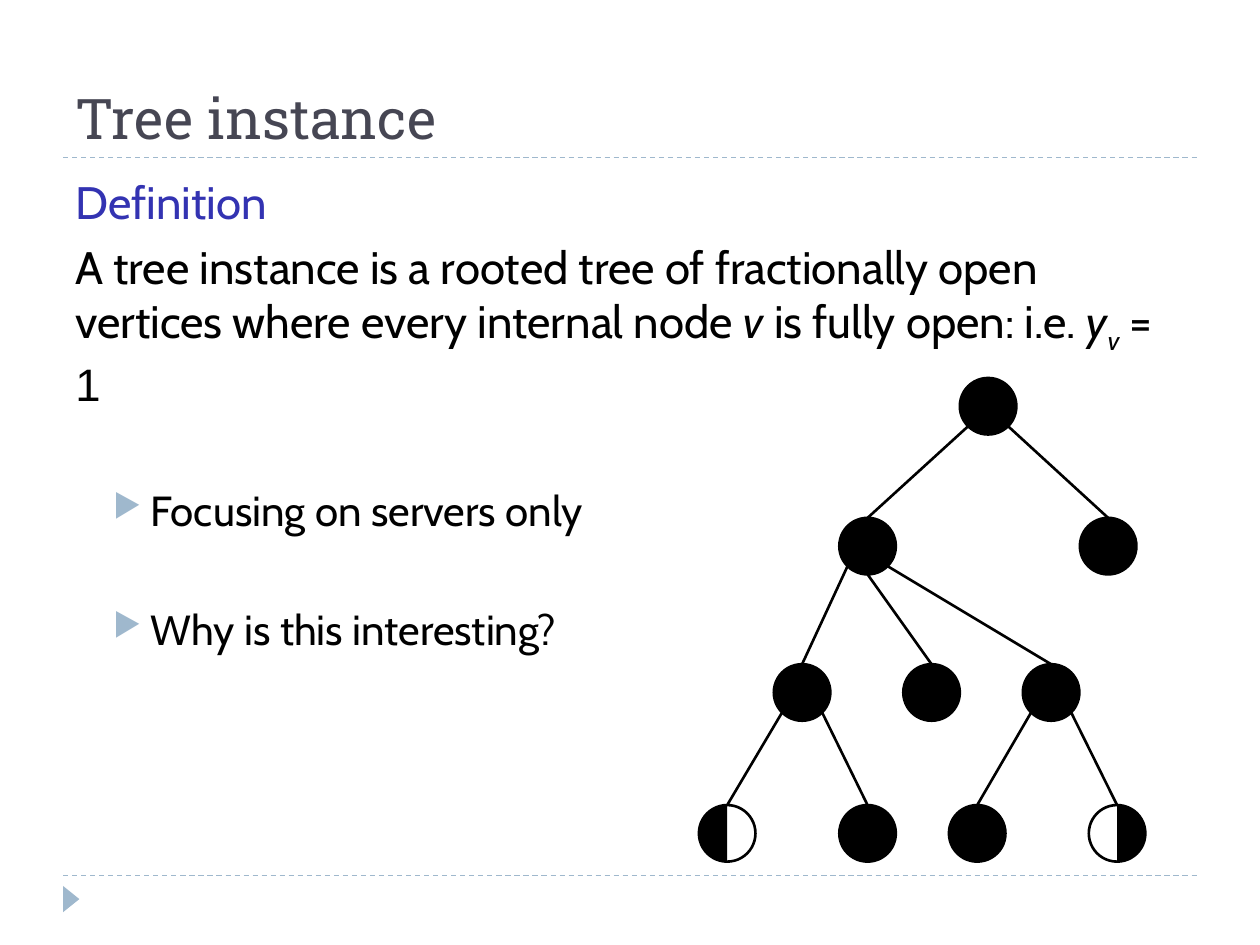
from lxml import etree
from pptx import Presentation
from pptx import util as u
from pptx.dml.color import RGBColor
from pptx.enum import dml, shapes, text
from pptx.oxml import ns

COLORS = {"title": "464653", "heading": "3333B2", "text": "000000", "accent": "9FB8CD"}
DIAMETER = 1.14
ROWS = [7.62, 10.44, 13.39, 16.23]

# name: (left in cm, row, filled part)
NODES = {
    "root": (19.35, 0, "all"),
    "left": (16.92, 1, "all"),
    "right": (21.77, 1, "all"),
    "left_a": (15.6, 2, "all"),
    "left_b": (18.21, 2, "all"),
    "left_c": (20.62, 2, "all"),
    "leaf_a": (14.09, 3, "left"),
    "leaf_b": (16.92, 3, "all"),
    "leaf_c": (19.13, 3, "all"),
    "leaf_d": (21.95, 3, "right"),
}
CHILDREN = {
    "root": ["left", "right"],
    "left": ["left_a", "left_b", "left_c"],
    "left_a": ["leaf_a", "leaf_b"],
    "left_c": ["leaf_c", "leaf_d"],
}
# Start and end of a half disc, in hundred-thousandths of 60000ths of a degree
HALF_ARCS = {"left": (54, 162), "right": (162, 54)}


def color(name):
    return RGBColor.from_string(COLORS[name])


def add_line(slide, start, end, color_name, width, dashed=False):
    points = [u.Cm(value) for value in (*start, *end)]
    line = slide.shapes.add_connector(shapes.MSO_CONNECTOR.STRAIGHT, *points)
    line.line.color.rgb = color(color_name)
    line.line.width = u.Pt(width)
    if dashed:
        line.line.dash_style = dml.MSO_LINE.DASH
    etree.SubElement(line._element.spPr, ns.qn("a:effectLst"))
    return line


def add_shape(slide, kind, left, top, width, height, fill=None, outline=None):
    box = [u.Cm(value) for value in (left, top, width, height)]
    shape = slide.shapes.add_shape(kind, *box)
    shape.shadow.inherit = False
    if fill:
        shape.fill.solid()
        shape.fill.fore_color.rgb = color(fill)
    else:
        shape.fill.background()
    if outline:
        shape.line.color.rgb = color(outline)
        shape.line.width = u.Pt(1.5)
    else:
        shape.line.fill.background()
    return shape


def add_text_box(slide, left, top, width, height, anchor):
    box = [u.Cm(value) for value in (left, top, width, height)]
    text_frame = slide.shapes.add_textbox(*box).text_frame
    text_frame.word_wrap = True
    text_frame.vertical_anchor = anchor
    return text_frame


def format_run(run, size, color_name="text", font="Cabin"):
    run.font.size = u.Pt(size)
    run.font.name = font
    run.font.color.rgb = color(color_name)


def add_bullet(paragraph):
    properties = paragraph._p.get_or_add_pPr()
    properties.set("marL", str(u.Cm(1.52)))
    properties.set("indent", str(-u.Cm(0.76)))
    bullet_color = etree.SubElement(properties, ns.qn("a:buClr"))
    etree.SubElement(bullet_color, ns.qn("a:srgbClr"), val=COLORS["accent"])
    etree.SubElement(properties, ns.qn("a:buSzPct"), val="76000")
    etree.SubElement(properties, ns.qn("a:buChar"), char="▶")


def add_frame(slide):
    """Dashed rules and the footer marker."""
    for y in (17.65, 3.18):
        add_line(slide, (1.27, y), (24.13, y), "accent", 0.75, dashed=True)
    marker = add_shape(slide, shapes.MSO_SHAPE.ISOSCELES_TRIANGLE,
                       1.17, 17.96, 0.53, 0.33, "accent")
    marker.rotation = 90


def add_title(slide):
    text_frame = add_text_box(slide, 1.27, 0.43, 22.86, 2.74, text.MSO_ANCHOR.BOTTOM)
    text_frame.text = "Tree instance"
    format_run(text_frame.paragraphs[0].runs[0], 32, "title", "Roboto Slab")


def add_definition(paragraph):
    parts = [
        ("A tree instance is a rooted tree of fractionally open vertices "
         "where every internal node ", False),
        ("v", True), (" is fully open: i.e. ", False),
        ("y", True), ("v", True), (" = ", False), ("1", False),
    ]
    for content, italic in parts:
        run = paragraph.add_run()
        run.text = content
        format_run(run, 26)
        run.font.italic = italic
    paragraph.runs[4].font._element.set("baseline", "-25000")
    paragraph.runs[-1].font.name = "Arial"


def add_body(slide):
    text_frame = add_text_box(slide, 1.27, 3.38, 22.86, 13.72, text.MSO_ANCHOR.TOP)
    heading = text_frame.paragraphs[0]
    heading.text = "Definition"
    heading.space_before = u.Pt(6)
    format_run(heading.runs[0], 26, "heading")

    definition = text_frame.add_paragraph()
    definition.space_before = u.Pt(6)
    add_definition(definition)

    for content, gap in (("Focusing on servers only", 42.6),
                         ("Why is this interesting?", 39)):
        paragraph = text_frame.add_paragraph()
        paragraph.text = content
        paragraph.space_before = u.Pt(gap)
        add_bullet(paragraph)
        format_run(paragraph.runs[0], 24)


def add_node(slide, left, row, part):
    box = (left, ROWS[row], DIAMETER, DIAMETER)
    fill = "text" if part == "all" else None
    node = add_shape(slide, shapes.MSO_SHAPE.OVAL, *box, fill, "text")
    if part in HALF_ARCS:
        half = add_shape(slide, shapes.MSO_SHAPE.ARC, *box, "text")
        half.adjustments[0], half.adjustments[1] = HALF_ARCS[part]
    return node


def add_edge(slide, parent, child, side, child_shape):
    """Join a parent's lower left (-1), bottom (0) or lower right (1) to a child's top."""
    radius = DIAMETER / 2
    diagonal = radius * 0.71
    left, row, _ = NODES[parent]
    start = (left + radius + side * diagonal,
             ROWS[row] + radius + (diagonal if side else radius))
    child_left, child_row, _ = NODES[child]
    end = (child_left + radius, ROWS[child_row])
    line = add_line(slide, start, end, "text", 1.5)
    line.end_connect(child_shape, 0)


def add_tree(slide):
    nodes = {name: add_node(slide, *node) for name, node in NODES.items()}
    for parent, children in CHILDREN.items():
        sides = (-1, 1) if len(children) == 2 else (-1, 0, 1)
        for child, side in zip(children, sides):
            add_edge(slide, parent, child, side, nodes[child])


def main():
    presentation = Presentation()
    presentation.slide_width = u.Cm(25.4)
    presentation.slide_height = u.Cm(19.05)
    slide = presentation.slides.add_slide(presentation.slide_layouts[6])
    add_frame(slide)
    add_title(slide)
    add_body(slide)
    add_tree(slide)
    presentation.save("out.pptx")


if __name__ == "__main__":
    main()
